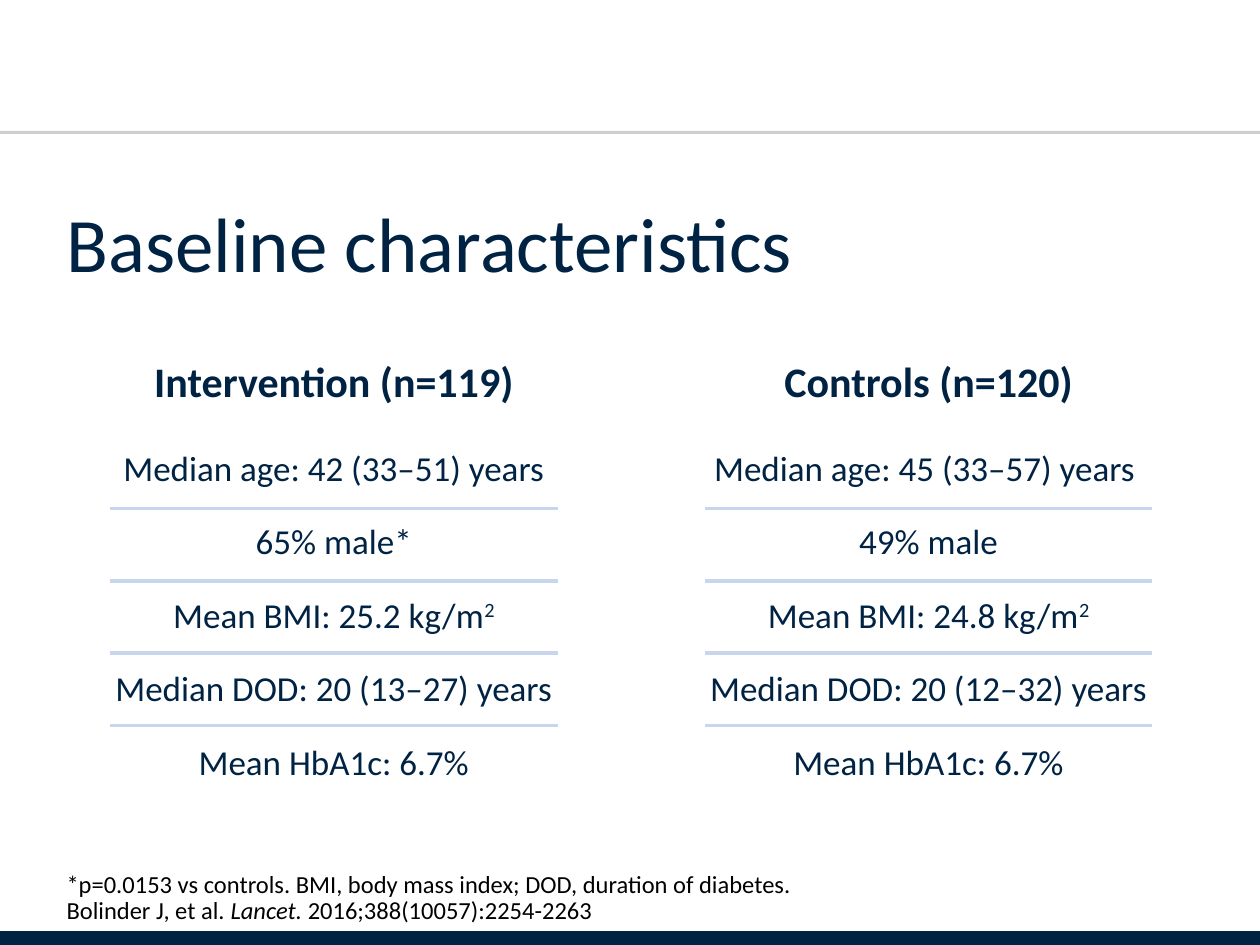
from lxml.etree import SubElement
from pptx import Presentation
from pptx.dml.color import RGBColor
from pptx.enum.shapes import MSO_CONNECTOR
from pptx.enum.text import MSO_ANCHOR, PP_ALIGN
from pptx.oxml.ns import qn
from pptx.util import Inches, Pt

NAVY = RGBColor(0x00, 0x23, 0x44)
GREY = RGBColor(0x9D, 0xA1, 0xA6)
PALE_BLUE = RGBColor(0xC7, 0xD5, 0xED)
BLACK = RGBColor(0, 0, 0)
WIDTH, HEIGHT = 10, 7.5

TITLE = dict(size=Pt(44), color=NAVY)
HEADING = dict(size=Pt(24), color=NAVY, bold=True)
BODY = dict(size=Pt(20), color=NAVY)
NOTE = dict(size=Pt(14), color=BLACK)
TIGHT = dict(line_spacing=0.9)
CENTERED = dict(alignment=PP_ALIGN.CENTER)

# Each paragraph is a list of (text, extra format) spans
GROUPS = [
    ("Intervention (n=119)", [
        [("Median age: 42 (33–51) years", {})],
        [("65% male*", {})],
        [("Mean BMI: 25.2 kg/m", {}), ("2", {"baseline": 30000})],
        [("Median DOD: 20 (13–27) years", {})],
        [("Mean HbA1c: 6.7%", {})],
    ]),
    ("Controls (n=120)", [
        [("Median age: 45 (33–57) years ", {})],
        [("49% male", {})],
        [("Mean BMI: 24.8 kg/m", {}), ("2", {"baseline": 30000})],
        [("Median DOD: 20 (12–32) years", {})],
        [("Mean HbA1c: 6.7%", {})],
    ]),
]
FOOTNOTES = [
    [("*p=0.0153 vs controls. BMI, body mass index; DOD, duration of diabetes.", {})],
    [("Bolinder J, et al. ", {}), ("Lancet. ", {"italic": True}),
     ("2016;388(10057):2254-2263", {})],
]


def format_span(span, formats):
    span.font.name = "Calibri"
    for name, value in formats.items():
        if name == "color":
            span.font.color.rgb = value
        elif name == "baseline":
            span.font._element.set("baseline", str(value))
        else:
            setattr(span.font, name, value)


def add_text(page, box, paragraphs, font, layout, anchor=MSO_ANCHOR.TOP):
    frame = page.shapes.add_textbox(*map(Inches, box)).text_frame
    frame.word_wrap = True
    frame.vertical_anchor = anchor
    for index, spans in enumerate(paragraphs):
        para = frame.add_paragraph() if index else frame.paragraphs[0]
        for name, value in layout.items():
            setattr(para, name, value)
        for text, extra in spans:
            span = para.add_run()
            span.text = text
            format_span(span, {**font, **extra})


def add_rule(page, left, right, y, color, weight, opacity=None):
    rule = page.shapes.add_connector(
        MSO_CONNECTOR.STRAIGHT, *map(Inches, (left, y, right, y)))
    rule.line.color.rgb = color
    rule.line.width = Pt(weight)
    properties = rule._element.spPr
    if opacity:
        shade = properties.find(".//" + qn("a:srgbClr"))
        SubElement(shade, qn("a:alpha")).set("val", str(opacity * 1000))
    SubElement(properties, qn("a:effectLst"))


def add_frame_lines(page):
    add_rule(page, 0, WIDTH, HEIGHT - 0.04, NAVY, 10)
    add_rule(page, 0, WIDTH, 0.14 * HEIGHT, GREY, 1.75, opacity=50)


def add_group(page, box, heading, facts):
    left, top, width, height = box
    body_top = top + 0.19 * height
    body_height = 0.81 * height
    add_text(page, (left, top, width, 0.25 * height), [[(heading, {})]],
             HEADING, {**CENTERED, **TIGHT})
    add_text(page, (left, body_top, width, body_height), facts,
             BODY, {**CENTERED, "space_after": Pt(18)})
    # One rule between each pair of neighbouring facts
    for row in range(len(facts) - 1):
        y = body_top + body_height * (0.19 + 0.2 * row)
        add_rule(page, left + 0.1 * width, left + 0.9 * width, y, PALE_BLUE, 2)


def main():
    deck = Presentation()
    deck.slide_width, deck.slide_height = Inches(WIDTH), Inches(HEIGHT)
    page = deck.slides.add_slide(deck.slide_layouts[6])
    margin = 0.43

    add_frame_lines(page)
    # Title
    add_text(page, (margin, 1.24, WIDTH - 2 * margin, 1.45),
             [[("Baseline characteristics", {})]], TITLE, TIGHT, MSO_ANCHOR.MIDDLE)
    # Two study groups side by side
    for column, (heading, facts) in enumerate(GROUPS):
        add_group(page, (margin + 4.72 * column, 2.82, 4.44, 3.54), heading, facts)
    # Footnotes
    add_text(page, (margin, 6.65, 6.26, 0.74), FOOTNOTES, NOTE, TIGHT,
             MSO_ANCHOR.BOTTOM)
    deck.save("out.pptx")


if __name__ == "__main__":
    main()
